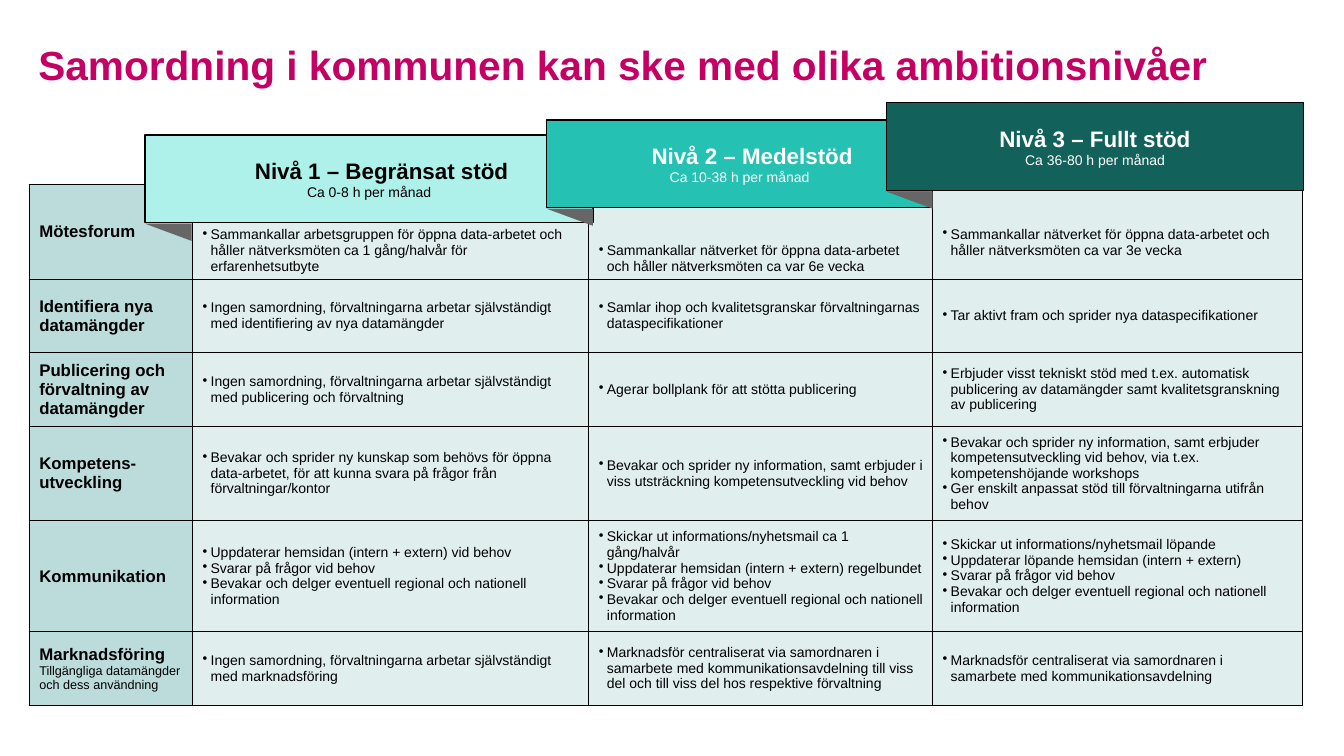
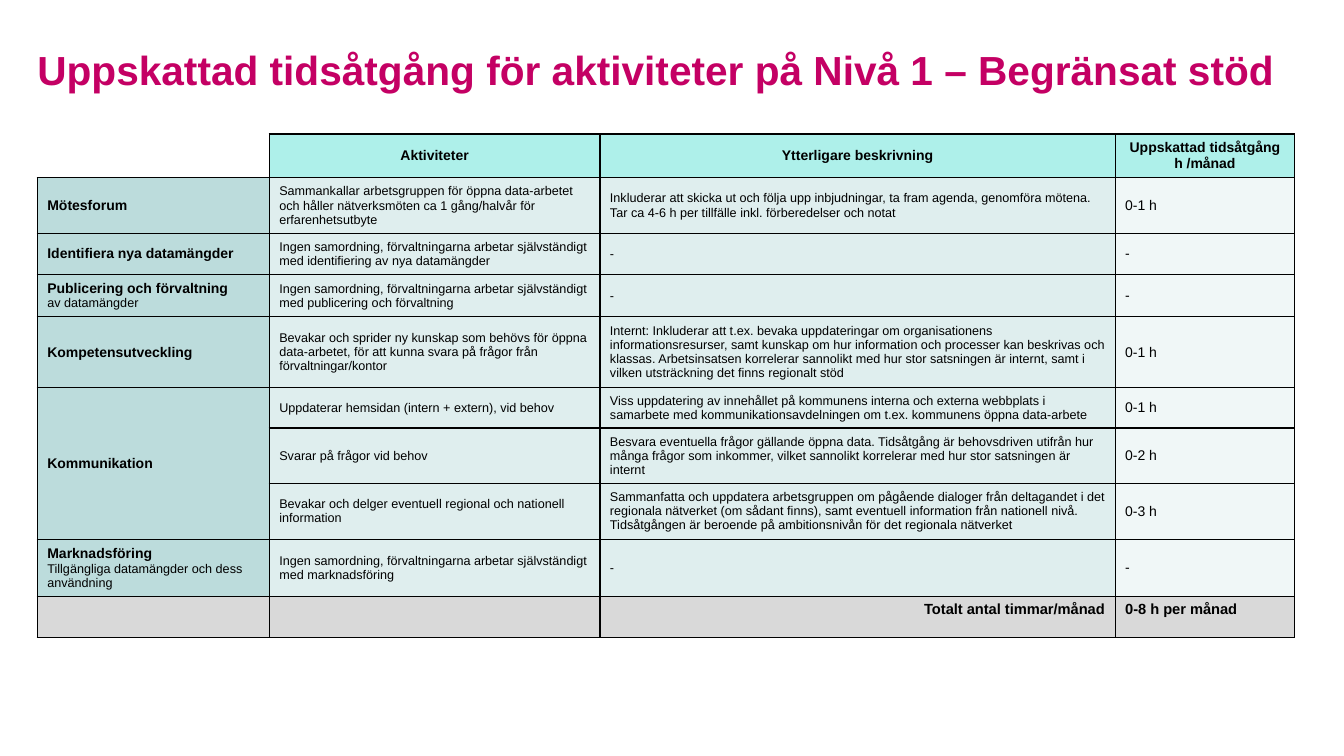
"""Build two slides on ambition levels and time estimates for municipal open data coordination."""
import pptx
import pptx.dml.color
import pptx.enum.dml
import pptx.enum.shapes
import pptx.enum.text
import pptx.oxml
import pptx.oxml.ns
import pptx.util

Inches = pptx.util.Inches
Pt = pptx.util.Pt
RGBColor = pptx.dml.color.RGBColor
ALIGN = pptx.enum.text.PP_ALIGN
ANCHOR = pptx.enum.text.MSO_ANCHOR
qn = pptx.oxml.ns.qn

FONT = "Arial"
MAGENTA = RGBColor(0xC4, 0x00, 0x64)
BLACK = RGBColor(0x00, 0x00, 0x00)
WHITE = RGBColor(0xFF, 0xFF, 0xFF)
SAGE = RGBColor(0xBC, 0xDC, 0xDC)
MINT = RGBColor(0xAE, 0xF0, 0xEA)
TEAL = RGBColor(0x25, 0xC1, 0xB3)
DEEP_TEAL = RGBColor(0x12, 0x61, 0x5A)
FOLD_GREY = RGBColor(0x66, 0x66, 0x66)
TOTAL_GREY = RGBColor(0xD9, 0xD9, 0xD9)


def write(tf, text, size=10, bold=False, color=BLACK, align=ALIGN.LEFT, bullet=False, note="", note_size=9):
    """Write one paragraph per line of text, then an optional smaller note."""
    tf.word_wrap = True
    lines = [(line, size, bold) for line in text.split("\n")]
    if note:
        lines.append((note, note_size, False))
    for i, (line, line_size, line_bold) in enumerate(lines):
        p = tf.add_paragraph() if i else tf.paragraphs[0]
        p.alignment = align
        if bullet:
            pPr = p._p.get_or_add_pPr()
            pPr.set("marL", str(Inches(0.08)))
            pPr.set("indent", str(-Inches(0.08)))
            pptx.oxml.ns.qn("a:buChar")
            pPr.append(pptx.oxml.parse_xml(f'<a:buChar {pptx.oxml.ns.nsdecls("a")} char="•"/>'))
        r = p.add_run()
        r.text = line
        r.font.name = FONT
        r.font.size = Pt(line_size)
        r.font.bold = line_bold
        r.font.color.rgb = color


def paint_cell(cell, color=None, opacity=100, sides="LRTB", anchor=ANCHOR.MIDDLE):
    """Give a cell its fill, black borders and vertical anchor."""
    cell.vertical_anchor = anchor
    if color is None:
        cell.fill.background()
    else:
        cell.fill.solid()
        cell.fill.fore_color.rgb = color
    tcPr = cell._tc.get_or_add_tcPr()
    if opacity < 100:
        alpha = tcPr.find(qn("a:solidFill"))[0].makeelement(qn("a:alpha"), {"val": str(opacity * 1000)})
        tcPr.find(qn("a:solidFill"))[0].append(alpha)
    for i, side in enumerate(sides):
        tcPr.insert(i, pptx.oxml.parse_xml(
            f'<a:ln{side} {pptx.oxml.ns.nsdecls("a")} w="12700"><a:solidFill>'
            f'<a:srgbClr val="{BLACK}"/></a:solidFill></a:ln{side}>'))


prs = pptx.Presentation()
prs.slide_width = Inches(13.33)
prs.slide_height = Inches(7.5)

pages = [
    ("Samordning i kommunen kan ske med olika ambitionsnivåer", 0.38, 0.4,
     0.29, 1.83, [1.62, 3.93, 3.41, 3.67], [0.94] + [0.73] * 5),
    ("Uppskattad tidsåtgång för aktiviteter på Nivå 1 – Begränsat stöd", 0.37, 0.45,
     0.37, 1.33, [2.3, 3.28, 5.11, 1.78], [0.41] * 5 + [0.22] * 3 + [0.41] * 2),
]
tables = []
for title, title_left, title_top, left, top, widths, heights in pages:
    s = prs.slides.add_slide(prs.slide_layouts[6])
    tf = s.shapes.add_textbox(Inches(title_left), Inches(title_top), Inches(12.68), Inches(0.91)).text_frame
    tf.margin_left = tf.margin_right = tf.margin_top = tf.margin_bottom = 0
    write(tf, title, size=29, bold=True, color=MAGENTA)
    for x in (5.62, 7.89):
        tick = s.shapes.add_connector(pptx.enum.shapes.MSO_CONNECTOR.STRAIGHT,
                                      Inches(x), Inches(0.75), Inches(x), Inches(0.76))
        tick.line.color.rgb = MAGENTA
        tick.line.width = Pt(1.5)
        tick.line.dash_style = pptx.enum.dml.MSO_LINE.SQUARE_DOT
        tick._element.spPr.append(tick._element.makeelement(qn("a:effectLst"), {}))
    table = s.shapes.add_table(len(heights), len(widths), Inches(left), Inches(top),
                               Inches(sum(widths)), Inches(sum(heights))).table
    table.first_row = table.horz_banding = False
    for column, width in zip(table.columns, widths):
        column.width = Inches(width)
    for row, height in zip(table.rows, heights):
        row.height = Inches(height)
    tables.append(table)
level_table, time_table = tables

level_rows = [
    ("Mötesforum", "",
     "Sammankallar arbetsgruppen för öppna data-arbetet och håller nätverksmöten ca 1 gång/halvår för "
     "erfarenhetsutbyte",
     "Sammankallar nätverket för öppna data-arbetet och håller nätverksmöten ca var 6e vecka",
     "Sammankallar nätverket för öppna data-arbetet och håller nätverksmöten ca var 3e vecka"),
    ("Identifiera nya datamängder", "",
     "Ingen samordning, förvaltningarna arbetar självständigt med identifiering av nya datamängder",
     "Samlar ihop och kvalitetsgranskar förvaltningarnas dataspecifikationer",
     "Tar aktivt fram och sprider nya dataspecifikationer"),
    ("Publicering och förvaltning av datamängder", "",
     "Ingen samordning, förvaltningarna arbetar självständigt med publicering och förvaltning",
     "Agerar bollplank för att stötta publicering",
     "Erbjuder visst tekniskt stöd med t.ex. automatisk publicering av datamängder samt "
     "kvalitetsgranskning av publicering"),
    ("Kompetens-\nutveckling", "",
     "Bevakar och sprider ny kunskap som behövs för öppna data-arbetet, för att kunna svara på frågor "
     "från förvaltningar/kontor",
     "Bevakar och sprider ny information, samt erbjuder i viss utsträckning kompetensutveckling vid behov",
     "Bevakar och sprider ny information, samt erbjuder kompetensutveckling vid behov, via t.ex. "
     "kompetenshöjande workshops\n"
     "Ger enskilt anpassat stöd till förvaltningarna utifrån behov"),
    ("Kommunikation", "",
     "Uppdaterar hemsidan (intern + extern) vid behov\nSvarar på frågor vid behov\n"
     "Bevakar och delger eventuell regional och nationell information",
     "Skickar ut informations/nyhetsmail ca 1 gång/halvår\n"
     "Uppdaterar hemsidan (intern + extern) regelbundet\nSvarar på frågor vid behov\n"
     "Bevakar och delger eventuell regional och nationell information",
     "Skickar ut informations/nyhetsmail löpande\n"
     "Uppdaterar löpande hemsidan (intern + extern)\nSvarar på frågor vid behov\n"
     "Bevakar och delger eventuell regional och nationell information"),
    ("Marknadsföring", "Tillgängliga datamängder och dess användning",
     "Ingen samordning, förvaltningarna arbetar självständigt med marknadsföring",
     "Marknadsför centraliserat via samordnaren i samarbete med kommunikationsavdelning till viss del "
     "och till viss del hos respektive förvaltning",
     "Marknadsför centraliserat via samordnaren i samarbete med kommunikationsavdelning"),
]
for i, (heading, note, *levels) in enumerate(level_rows):
    cell = level_table.cell(i, 0)
    paint_cell(cell, SAGE)
    write(cell.text_frame, heading, size=12, bold=True, note=note)
    for j, text in enumerate(levels, start=1):
        cell = level_table.cell(i, j)
        paint_cell(cell, SAGE, opacity=46, anchor=ANCHOR.MIDDLE if i else ANCHOR.BOTTOM)
        write(cell.text_frame, text, bullet=True)
level_table.cell(0, 3).margin_bottom = Inches(0.21)

shapes = prs.slides[0].shapes
banners = [
    (1.44, 1.34, 4.44, MINT, BLACK, "Nivå 1 – Begränsat stöd", "Ca 0-8 h per månad", 0.25),
    (5.42, 1.19, 3.83, TEAL, WHITE, "Nivå 2 – Medelstöd", "Ca 10-38 h per månad", 0.25),
    (8.79, 1.02, 4.14, DEEP_TEAL, WHITE, "Nivå 3 – Fullt stöd", "Ca 36-80 h per månad", 0),
]
for left, top, width, fill, color, level, hours, indent in banners:
    sp = shapes.add_shape(pptx.enum.shapes.MSO_SHAPE.RECTANGLE,
                          Inches(left), Inches(top), Inches(width), Inches(0.87))
    sp.shadow.inherit = False
    sp.fill.solid()
    sp.fill.fore_color.rgb = fill
    sp.line.color.rgb = BLACK
    sp.line.width = Pt(1)
    tf = sp.text_frame
    tf.vertical_anchor = ANCHOR.MIDDLE
    tf.margin_left = tf.margin_right = Inches(0.28)
    tf.margin_top = tf.margin_bottom = Inches(0.1)
    write(tf, level, size=16, bold=True, color=color, align=ALIGN.CENTER, note=hours, note_size=10)
    tf.paragraphs[0]._p.get_or_add_pPr().set("marL", str(Inches(indent)))

    fold_top = Inches(top + 0.88)
    fold_right = Inches(left + 0.46)
    builder = shapes.build_freeform(fold_right, fold_top + Inches(0.17))
    builder.add_line_segments([(fold_right, fold_top), (Inches(left), fold_top)], close=True)
    fold = builder.convert_to_shape()
    fold.shadow.inherit = False
    fold.fill.solid()
    fold.fill.fore_color.rgb = FOLD_GREY
    fold.line.fill.background()

paint_cell(time_table.cell(0, 0), sides="RB")
for j, text in enumerate(["Aktiviteter", "Ytterligare beskrivning", "Uppskattad tidsåtgång h /månad"], start=1):
    cell = time_table.cell(0, j)
    paint_cell(cell, MINT)
    write(cell.text_frame, text, bold=True, align=ALIGN.CENTER)

time_rows = [
    ("Mötesforum", "",
     "Sammankallar arbetsgruppen för öppna data-arbetet och håller nätverksmöten ca 1 gång/halvår för "
     "erfarenhetsutbyte",
     "Inkluderar att skicka ut och följa upp inbjudningar, ta fram agenda, genomföra mötena. Tar ca 4-6 h "
     "per tillfälle inkl. förberedelser och notat", "0-1 h"),
    ("Identifiera nya datamängder", "",
     "Ingen samordning, förvaltningarna arbetar självständigt med identifiering av nya datamängder", "-", "-"),
    ("Publicering och förvaltning", "av datamängder",
     "Ingen samordning, förvaltningarna arbetar självständigt med publicering och förvaltning", "-", "-"),
    ("Kompetensutveckling", "",
     "Bevakar och sprider ny kunskap som behövs för öppna data-arbetet, för att kunna svara på frågor från "
     "förvaltningar/kontor",
     "Internt: Inkluderar att t.ex. bevaka uppdateringar om organisationens informationsresurser, samt "
     "kunskap om hur information och processer kan beskrivas och klassas. Arbetsinsatsen korrelerar "
     "sannolikt med hur stor satsningen är internt, samt i vilken utsträckning det finns regionalt stöd",
     "0-1 h"),
    ("Kommunikation", "",
     "Uppdaterar hemsidan (intern + extern), vid behov",
     "Viss uppdatering av innehållet på kommunens interna och externa webbplats i samarbete med "
     "kommunikationsavdelningen om t.ex. kommunens öppna data-arbete", "0-1 h"),
    ("", "", "Svarar på frågor vid behov",
     "Besvara eventuella frågor gällande öppna data. Tidsåtgång är behovsdriven utifrån hur många frågor "
     "som inkommer, vilket sannolikt korrelerar med hur stor satsningen är internt", "0-2 h"),
    ("", "", "Bevakar och delger eventuell regional och nationell information",
     "Sammanfatta och uppdatera arbetsgruppen om pågående dialoger från deltagandet i det regionala "
     "nätverket (om sådant finns), samt eventuell information från nationell nivå. Tidsåtgången är "
     "beroende på ambitionsnivån för det regionala nätverket", "0-3 h"),
    ("Marknadsföring", "Tillgängliga datamängder och dess användning",
     "Ingen samordning, förvaltningarna arbetar självständigt med marknadsföring", "-", "-"),
]
for i, (heading, note, *details) in enumerate(time_rows, start=1):
    cell = time_table.cell(i, 0)
    paint_cell(cell, SAGE)
    if heading:
        write(cell.text_frame, heading, bold=True, note=note)
    for j, (text, size, opacity) in enumerate(zip(details, (9, 9, 10), (47, 47, 21)), start=1):
        cell = time_table.cell(i, j)
        paint_cell(cell, SAGE, opacity=opacity)
        write(cell.text_frame, text, size=size)
time_table.cell(5, 0).merge(time_table.cell(7, 0))

for j in range(4):
    paint_cell(time_table.cell(9, j), TOTAL_GREY, anchor=ANCHOR.TOP)
write(time_table.cell(9, 2).text_frame, "Totalt antal timmar/månad", size=10.5, bold=True, align=ALIGN.RIGHT)
write(time_table.cell(9, 3).text_frame, "0-8 h per månad", size=10.5, bold=True)

prs.save("out.pptx")
